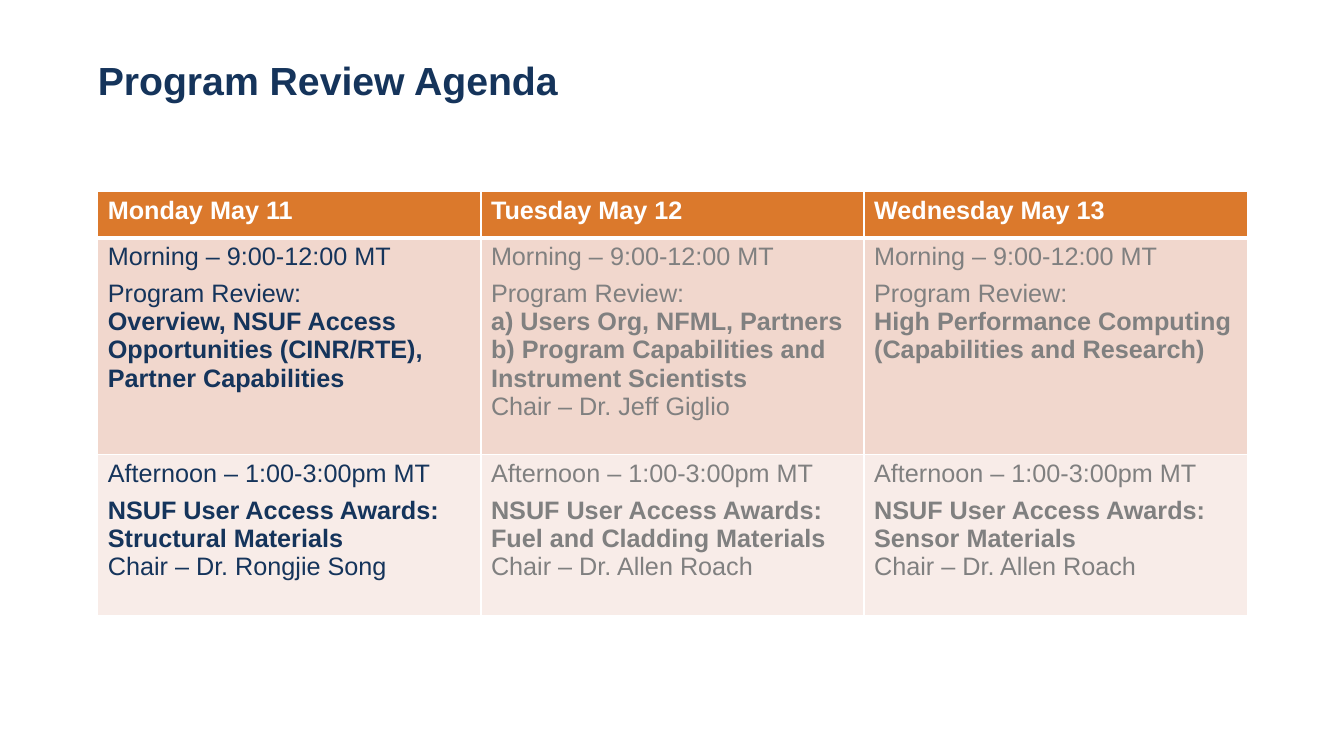
"""Build the Program Review Agenda slide."""
from lxml.etree import SubElement
from pptx import Presentation
from pptx.dml.color import RGBColor
from pptx.oxml.ns import qn
from pptx.util import Inches, Pt

NAVY, GRAY, WHITE = "15345B", "808080", "FFFFFF"
ROW_FILLS = ["DB792C", "F1D7CD", "F8ECE8"]
ROW_HEIGHTS = [0.46, 2.15, 1.6]
COLUMN_WIDTH = 3.8

DAYS = ["Monday May 11", "Tuesday May 12", "Wednesday May 13"]
MORNING, AFTERNOON = "Morning – 9:00-12:00 MT", "Afternoon – 1:00-3:00pm MT"
REVIEW, AWARDS = "Program Review:", "NSUF User Access Awards:"
AGENDA = [
    [[(day, True)] for day in DAYS],
    [
        [(MORNING, False), (REVIEW, False),
         ("Overview, NSUF Access Opportunities (CINR/RTE), Partner Capabilities", True)],
        [(MORNING, False), (REVIEW, False),
         ("a) Users Org, NFML, Partners", True),
         ("b) Program Capabilities and Instrument Scientists", True),
         ("Chair – Dr. Jeff Giglio", False)],
        [(MORNING, False), (REVIEW, False),
         ("High Performance Computing (Capabilities and Research)", True)],
    ],
    [
        [(AFTERNOON, False), (f"{AWARDS} Structural Materials", True),
         ("Chair – Dr. Rongjie Song", False)],
        [(AFTERNOON, False), (f"{AWARDS} Fuel and Cladding Materials", True),
         ("Chair – Dr. Allen Roach", False)],
        [(AFTERNOON, False), (AWARDS, True), ("Sensor Materials", True),
         ("Chair – Dr. Allen Roach", False)],
    ],
]


def write(paragraph, text, size=18, color=NAVY, bold=False, space_after=0):
    paragraph.space_after = Pt(space_after)
    run = paragraph.add_run()
    run.text = text
    run.font.name = "Arial"
    run.font.size = Pt(size)
    run.font.bold = bold
    run.font.color.rgb = RGBColor.from_string(color)


def add_border(cell, side, width):
    line = SubElement(cell._tc.get_or_add_tcPr(), qn(f"a:{side}"), w=str(Pt(width)))
    fill = SubElement(line, qn("a:solidFill"))
    SubElement(fill, qn("a:srgbClr"), val=WHITE)


presentation = Presentation()
presentation.slide_width = Inches(13.33)
presentation.slide_height = Inches(7.5)
slide = presentation.slides.add_slide(presentation.slide_layouts[6])

title = slide.shapes.add_textbox(Inches(0.97), Inches(0.61), Inches(11.39), Inches(1.1))
title_frame = title.text_frame
title_frame.word_wrap = True
title_frame.margin_left = title_frame.margin_top = 0
title_frame.paragraphs[0].line_spacing = 0.9
write(title_frame.paragraphs[0], "Program Review Agenda", size=28, bold=True)

table = slide.shapes.add_table(
    len(AGENDA), len(DAYS), Inches(0.97), Inches(1.9),
    Inches(COLUMN_WIDTH * len(DAYS)), Inches(sum(ROW_HEIGHTS))).table
for column in table.columns:
    column.width = Inches(COLUMN_WIDTH)

for row_index, (agenda_row, height, row_fill) in enumerate(zip(AGENDA, ROW_HEIGHTS, ROW_FILLS)):
    table.rows[row_index].height = Inches(height)
    for column_index, entries in enumerate(agenda_row):
        cell = table.cell(row_index, column_index)
        add_border(cell, "lnL", 1)
        add_border(cell, "lnR", 1)
        add_border(cell, "lnT", 3 if row_index == 1 else 1)
        add_border(cell, "lnB", 3 if row_index == 0 else 1)
        cell.fill.solid()
        cell.fill.fore_color.rgb = RGBColor.from_string(row_fill)
        day_color = NAVY if column_index == 0 else GRAY
        color = WHITE if row_index == 0 else day_color
        frame = cell.text_frame
        for position, (text, bold) in enumerate(entries):
            paragraph = frame.add_paragraph() if position else frame.paragraphs[0]
            space_after = 6 if row_index and position == 0 else 0
            write(paragraph, text, color=color, bold=bold, space_after=space_after)

presentation.save("out.pptx")
